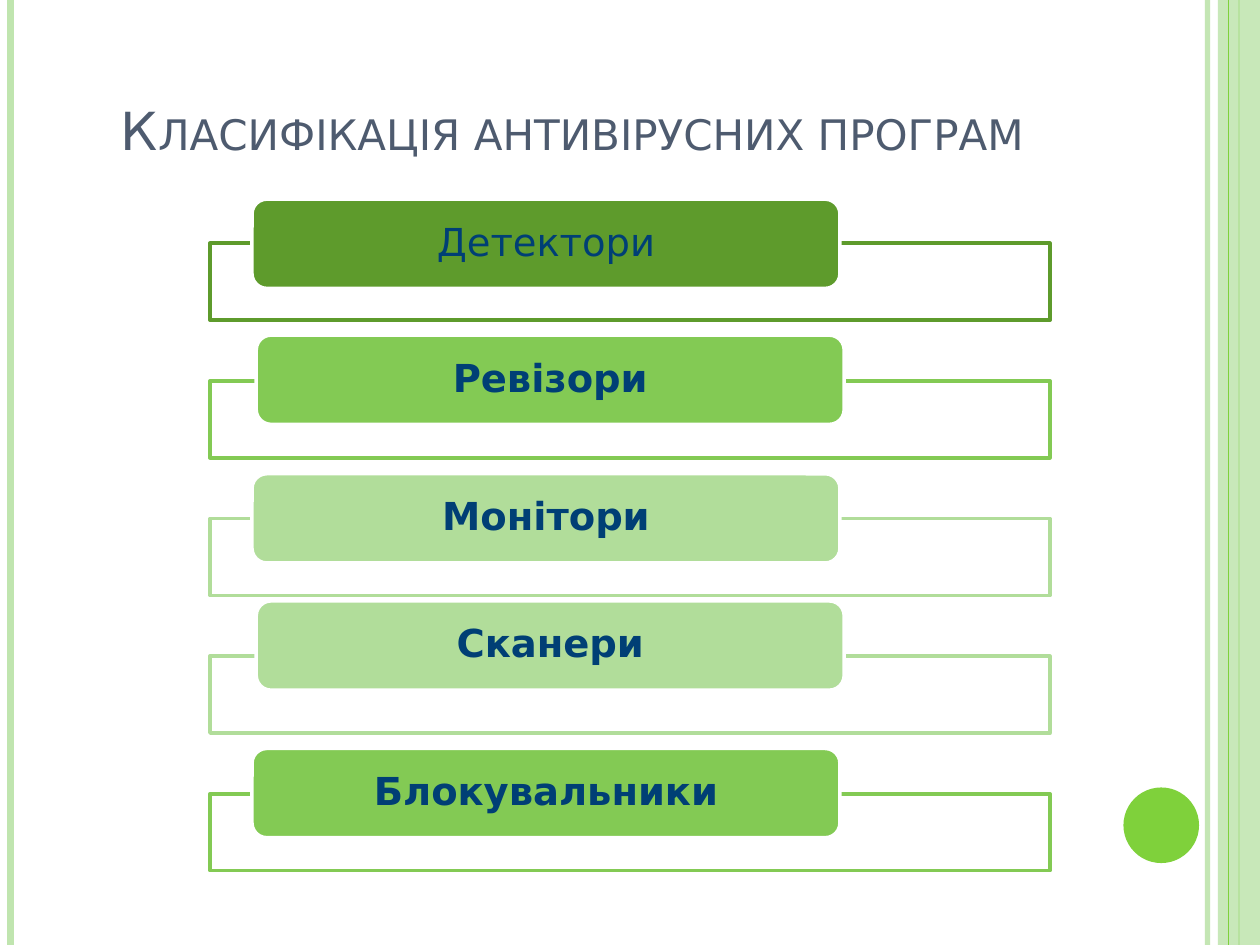
from lxml.etree import SubElement
from pptx import Presentation
from pptx.dml.color import RGBColor
from pptx.enum.shapes import MSO_CONNECTOR, MSO_SHAPE
from pptx.enum.text import MSO_ANCHOR, PP_ALIGN
from pptx.oxml.ns import qn
from pptx.util import Pt

WIDTH, HEIGHT = 720, 540
FONT = "DejaVu Sans"
COLOURS = {
    "white": "FFFFFF",
    "pale": "C0E5AF",
    "bright": "7FD13B",
    "dark": "5E9B2C",
    "medium": "83CA54",
    "light": "B1DD9A",
    "title": "4E5B6F",
    "label": "003F75",
}

FRAME_LEFT, FRAME_TOP, FRAME_PITCH = 120, 139, 78.65
FRAME_WIDTH, FRAME_HEIGHT = 480, 44
LABEL_WIDTH, LABEL_HEIGHT = 336, 51

# text, colour, label left, label top, bold
PROGRAM_TYPES = [
    ("Детектори", "dark", 144, 113.8, False),
    ("Ревізори", "medium", 146.4, 191.5, True),
    ("Монітори", "light", 144, 270.7, True),
    ("Сканери", "light", 146.4, 343.4, True),
    ("Блокувальники", "medium", 144, 427.7, True),
]


def colour(name):
    return RGBColor.from_string(COLOURS[name])


def set_opacity(color_parent, percent):
    """Add an alpha value to the solid colour found below the element."""
    color = color_parent.find(".//" + qn("a:srgbClr"))
    SubElement(color, qn("a:alpha")).set("val", str(percent * 1000))


class SlideBuilder:
    """Holds the current slide and draws its elements in one style."""

    def __init__(self, slide):
        self.slide = slide

    def vertical_line(self, x, color, width, opacity=100):
        line = self.slide.shapes.add_connector(
            MSO_CONNECTOR.STRAIGHT, Pt(x), Pt(0), Pt(x), Pt(HEIGHT))
        line.line.color.rgb = colour(color)
        line.line.width = Pt(width)
        properties = line._element.spPr
        if opacity < 100:
            set_opacity(properties, opacity)
        SubElement(properties, qn("a:effectLst"))

    def shape(self, kind, box, fill, outline=None, opacity=100):
        shape = self.slide.shapes.add_shape(kind, *map(Pt, box))
        shape.shadow.inherit = False
        shape.fill.solid()
        shape.fill.fore_color.rgb = colour(fill)
        if opacity < 100:
            set_opacity(shape._element.spPr.find(qn("a:solidFill")), opacity)
        if outline:
            shape.line.color.rgb = colour(outline)
            shape.line.width = Pt(2)
        else:
            shape.line.fill.background()
        return shape

    def run(self, paragraph, text, size, color, bold=False):
        run = paragraph.add_run()
        run.text = text
        run.font.name = FONT
        run.font.size = Pt(size)
        run.font.bold = bold
        run.font.color.rgb = colour(color)
        return run

    def title(self, text, box):
        frame = self.slide.shapes.add_textbox(*map(Pt, box)).text_frame
        frame.word_wrap = True
        frame.vertical_anchor = MSO_ANCHOR.BOTTOM
        run = self.run(frame.paragraphs[0], text, 30, "title")
        run._r.get_or_add_rPr().set("cap", "small")

    def label(self, text, box, fill, bold):
        shape = self.shape(MSO_SHAPE.ROUNDED_RECTANGLE, box, fill, "white")
        frame = shape.text_frame
        frame.word_wrap = True
        frame.vertical_anchor = MSO_ANCHOR.MIDDLE
        frame.margin_left = frame.margin_right = Pt(13)
        frame.margin_top = frame.margin_bottom = Pt(0)
        paragraph = frame.paragraphs[0]
        paragraph.alignment = PP_ALIGN.CENTER
        paragraph.line_spacing = 0.9
        self.run(paragraph, text, 22, "label", bold)


def main():
    presentation = Presentation()
    presentation.slide_width, presentation.slide_height = Pt(WIDTH), Pt(HEIGHT)
    slide = presentation.slides.add_slide(presentation.slide_layouts[6])
    builder = SlideBuilder(slide)

    builder.vertical_line(690, "pale", 3, opacity=93)
    builder.vertical_line(6, "pale", 4.5)
    builder.vertical_line(708, "bright", 1.5)
    builder.shape(MSO_SHAPE.RECTANGLE, (696, 0, 24, HEIGHT), "pale", opacity=87)
    builder.vertical_line(702, "bright", 0.75)
    builder.shape(MSO_SHAPE.OVAL, (642, 450, 43.2, 43.2), "bright")

    builder.title("Класифікація антивірусних програм", (62, 21.6, 562, 74.2))

    for index, (text, color, left, top, bold) in enumerate(PROGRAM_TYPES):
        frame_top = FRAME_TOP + index * FRAME_PITCH
        builder.shape(MSO_SHAPE.RECTANGLE,
                      (FRAME_LEFT, frame_top, FRAME_WIDTH, FRAME_HEIGHT),
                      "white", color, opacity=90)
        builder.label(text, (left, top, LABEL_WIDTH, LABEL_HEIGHT), color, bold)

    presentation.save("out.pptx")


if __name__ == "__main__":
    main()
